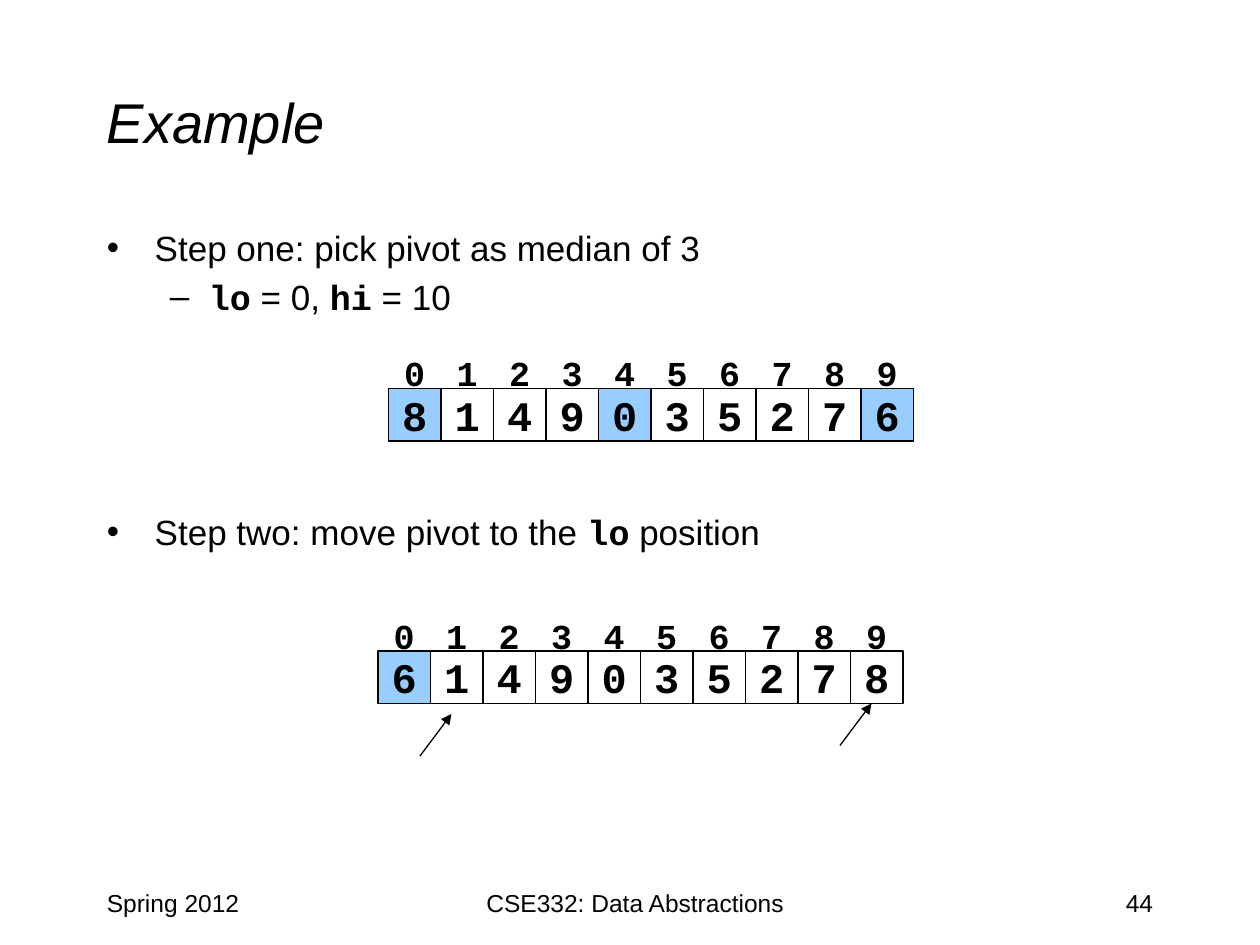
from pptx import Presentation
from pptx.dml.color import RGBColor as Rgb
from pptx.enum.shapes import MSO_CONNECTOR as Connector, MSO_SHAPE as Shape
from pptx.enum.text import MSO_ANCHOR as Anchor, PP_ALIGN as Align
from pptx.oxml.xmlchemy import OxmlElement as Element
from pptx.util import Inches, Pt

COLORS = {"ink": "000000", "marked": "99CCFF"}
UNIT = Inches(1) // 12  # the page is a grid of 120 columns by 90 rows
CELL = 5                # side of an array cell, in grid units
INDEX_RISE = 4          # how far the index row starts above its cells

TITLE = {"name": "Arial", "size": Pt(32), "italic": True}
BODY = {"name": "Arial", "size": Pt(20), "bold": False}
CODE = {"name": "Courier New", "size": Pt(20), "bold": True}
VALUE = {**CODE, "size": Pt(24)}
FOOTER = {"name": "Arial", "size": Pt(14)}

# Bullet character, left margin and hanging indent in inches, per level
BULLETS = [("•", 0.38, -0.38), ("–", 0.81, -0.31)]


def grid(*lengths):
    return [round(length * UNIT) for length in lengths]


def add_child(parent, tag, **attributes):
    child = Element(tag)
    for name, value in attributes.items():
        child.set(name, str(value))
    parent.append(child)
    return child


def add_span(para, text, style):
    span = para.add_run()
    span.text = text
    for name, value in style.items():
        setattr(span.font, name, value)
    span.font.color.rgb = Rgb.from_string(COLORS["ink"])


def fill_frame(frame, text, style, align, anchor, wrap):
    frame.word_wrap = wrap
    frame.vertical_anchor = anchor
    para = frame.paragraphs[0]
    para.alignment = align
    add_span(para, text, style)


def add_text(page, box, text, style, align=Align.LEFT, anchor=Anchor.TOP, wrap=True):
    frame = page.shapes.add_textbox(*grid(*box)).text_frame
    fill_frame(frame, text, style, align, anchor, wrap)


def add_bullets(page, box, items):
    """Each item is a level and its (text, style) spans."""
    frame = page.shapes.add_textbox(*grid(*box)).text_frame
    frame.word_wrap = True
    for number, (level, spans) in enumerate(items):
        para = frame.add_paragraph() if number else frame.paragraphs[0]
        para.level = level
        mark, margin, indent = BULLETS[level]
        properties = para._p.get_or_add_pPr()
        properties.set("marL", str(Inches(margin)))
        properties.set("indent", str(Inches(indent)))
        spacing = add_child(properties, "a:spcBef")
        add_child(spacing, "a:spcPct", val=20000)
        add_child(properties, "a:buFont", typeface="Arial")
        add_child(properties, "a:buChar", char=mark)
        for text, style in spans:
            add_span(para, text, style)


def add_array(page, left, top, values, marked):
    """Row of value cells with their indices above."""
    for index, value in enumerate(values):
        column = left + index * CELL
        cell = page.shapes.add_shape(Shape.RECTANGLE, *grid(column, top, CELL, CELL))
        cell.shadow.inherit = False
        if index in marked:
            cell.fill.solid()
            cell.fill.fore_color.rgb = Rgb.from_string(COLORS["marked"])
        else:
            cell.fill.background()
        cell.line.color.rgb = Rgb.from_string(COLORS["ink"])
        cell.line.width = Pt(0.75)
        fill_frame(cell.text_frame, str(value), VALUE, Align.CENTER, Anchor.MIDDLE, False)
    # Indices come last so that no cell covers them
    for index in range(len(values)):
        box = (left + index * CELL, top - INDEX_RISE, CELL, CELL)
        add_text(page, box, str(index), CODE, Align.CENTER, Anchor.MIDDLE, False)


def add_pointer(page, left, top, width=3, height=4):
    """Arrow rising from the lower left to the upper right of its box."""
    ends = grid(left, top + height, left + width, top)
    arrow = page.shapes.add_connector(Connector.STRAIGHT, *ends)
    arrow.line.color.rgb = Rgb.from_string(COLORS["ink"])
    arrow.line.width = Pt(0.75)
    add_child(arrow.line._get_or_add_ln(), "a:tailEnd", type="triangle")
    add_child(arrow._element.spPr, "a:effectLst")


def add_footer(page, top, height):
    for left, width, text, align in [
        (9, 25, "Spring 2012", Align.LEFT),
        (38, 45, "CSE332: Data Abstractions", Align.CENTER),
        (86, 25, "44", Align.RIGHT),
    ]:
        add_text(page, (left, top, width, height), text, FOOTER, align)


def main():
    deck = Presentation()
    deck.slide_width, deck.slide_height = grid(120, 90)
    page = deck.slides.add_slide(deck.slide_layouts[6])

    add_text(page, (9, 4, 102, 15), "Example", TITLE, anchor=Anchor.MIDDLE)

    # Step one: the three pivot candidates are marked
    add_bullets(page, (9, 21, 102, 11), [
        (0, [("Step one: pick pivot as median of 3", BODY)]),
        (1, [("lo", CODE), (" = 0, ", BODY), ("hi", CODE), (" = 10", BODY)]),
    ])
    add_array(page, 37, 37, [8, 1, 4, 9, 0, 3, 5, 2, 7, 6], marked={0, 4, 9})

    # Step two: the pivot is in front, with a pointer at each end of the rest
    add_bullets(page, (9, 48, 102, 11), [
        (0, [("Step two: move pivot to the ", BODY), ("lo", CODE), (" position", BODY)]),
    ])
    add_array(page, 36, 62, [6, 1, 4, 9, 0, 3, 5, 2, 7, 8], marked={0})
    add_pointer(page, 40, 68)
    add_pointer(page, 80, 67)

    add_footer(page, 84, 6)
    deck.save("out.pptx")


if __name__ == "__main__":
    main()
